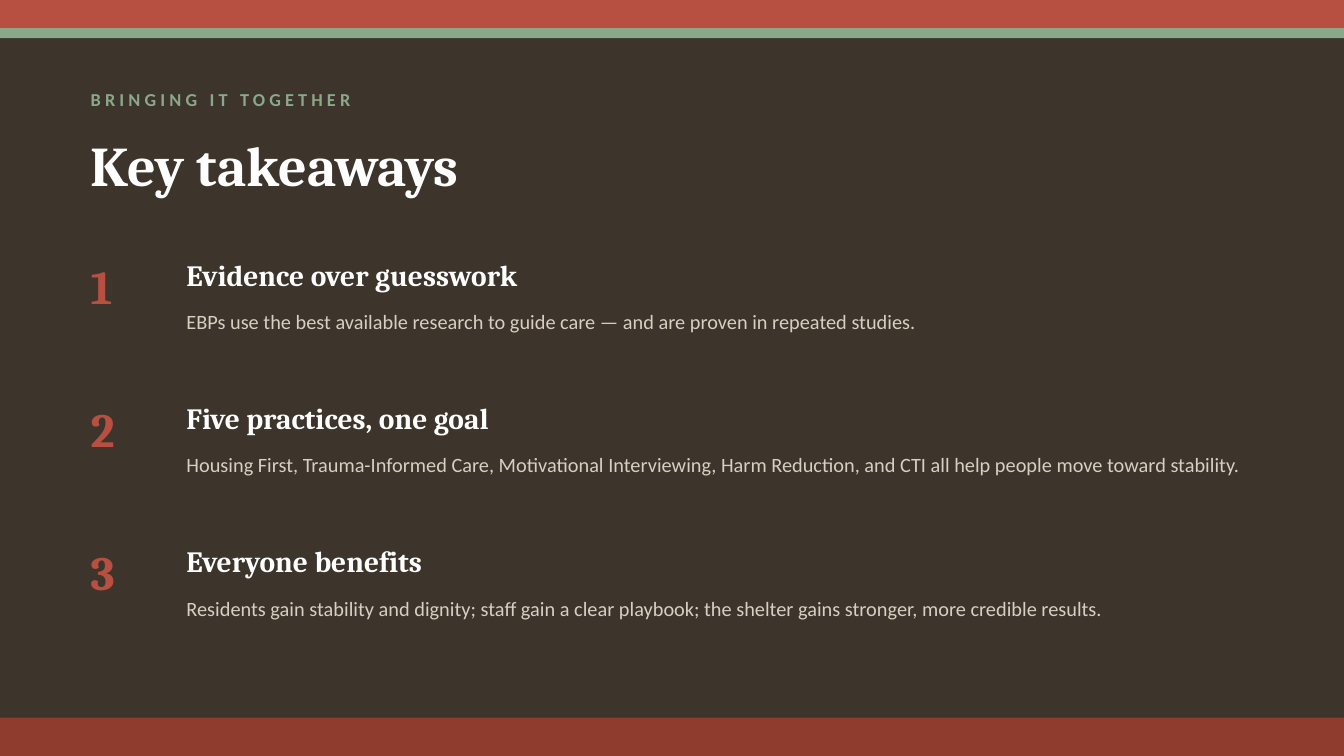
from dataclasses import dataclass

from pptx import Presentation
from pptx.dml.color import RGBColor
from pptx.enum.shapes import MSO_SHAPE
from pptx.enum.text import MSO_ANCHOR
from pptx.slide import Slide
from pptx.util import Pt

DARK = RGBColor(0x3D, 0x34, 0x2C)
CLAY = RGBColor(0xB8, 0x50, 0x42)
BRICK = RGBColor(0x8F, 0x3B, 0x2E)
SAGE = RGBColor(0x8B, 0xA8, 0x88)
SAND = RGBColor(0xD8, 0xCF, 0xC1)
WHITE = RGBColor(0xFF, 0xFF, 0xFF)

# Lengths in points
SLIDE_W, SLIDE_H = 960, 540
LEFT, HEADER_W = 64.8, 828
TEXT_LEFT, TEXT_W = 133.2, 763.2
FIRST_ROW, ROW_STEP, BODY_OFFSET = 183.6, 102.24, 37.44
CELL = 61.2


@dataclass(frozen=True)
class Band:
    top: float
    height: float
    color: RGBColor


@dataclass(frozen=True)
class Style:
    font: str
    size: float
    color: RGBColor
    bold: bool = True
    spacing: int = 0  # hundredths of a point
    anchor: MSO_ANCHOR = MSO_ANCHOR.TOP


@dataclass(frozen=True)
class Takeaway:
    heading: str
    body: str


EYEBROW = Style("Calibri", 13, SAGE, spacing=300, anchor=MSO_ANCHOR.MIDDLE)
TITLE = Style("Cambria", 40, WHITE)
NUMBER = Style("Cambria", 34, CLAY)
HEADING = Style("Cambria", 21, WHITE)
BODY = Style("Calibri", 14.5, SAND, bold=False)

BANDS = [
    Band(0, 20.16, CLAY),
    Band(20.16, 7.2, SAGE),
    Band(512.64, 27.36, BRICK),
]

TAKEAWAYS = [
    Takeaway(
        "Evidence over guesswork",
        "EBPs use the best available research to guide care — and are proven "
        "in repeated studies.",
    ),
    Takeaway(
        "Five practices, one goal",
        "Housing First, Trauma-Informed Care, Motivational Interviewing, "
        "Harm Reduction, and CTI all help people move toward stability.",
    ),
    Takeaway(
        "Everyone benefits",
        "Residents gain stability and dignity; staff gain a clear playbook; "
        "the shelter gains stronger, more credible results.",
    ),
]


def add_band(slide: Slide, band: Band) -> None:
    sp = slide.shapes.add_shape(
        MSO_SHAPE.RECTANGLE, 0, Pt(band.top), Pt(SLIDE_W), Pt(band.height)
    )
    sp.shadow.inherit = False
    sp.fill.solid()
    sp.fill.fore_color.rgb = band.color
    sp.line.fill.background()


def add_text(slide: Slide, text: str, style: Style, left: float, top: float,
             width: float, height: float) -> None:
    sp = slide.shapes.add_textbox(Pt(left), Pt(top), Pt(width), Pt(height))
    tf = sp.text_frame
    tf.word_wrap = True
    tf.vertical_anchor = style.anchor
    tf.margin_left = tf.margin_top = tf.margin_right = tf.margin_bottom = 0
    r = tf.paragraphs[0].add_run()
    r.text = text
    r.font.name = style.font
    r.font.size = Pt(style.size)
    r.font.bold = style.bold
    r.font.color.rgb = style.color
    if style.spacing:
        r.font._element.set("spc", str(style.spacing))


def add_takeaway(slide: Slide, index: int, item: Takeaway) -> None:
    top = FIRST_ROW + index * ROW_STEP
    add_text(slide, str(index + 1), NUMBER, LEFT, top, CELL, CELL)
    add_text(slide, item.heading, HEADING, TEXT_LEFT, top, TEXT_W, 36)
    add_text(slide, item.body, BODY, TEXT_LEFT, top + BODY_OFFSET, TEXT_W, CELL)


def main() -> None:
    prs = Presentation()
    prs.slide_width, prs.slide_height = Pt(SLIDE_W), Pt(SLIDE_H)
    slide = prs.slides.add_slide(prs.slide_layouts[6])
    slide.background.fill.solid()
    slide.background.fill.fore_color.rgb = DARK

    # Bands along the top and bottom edges
    for band in BANDS:
        add_band(slide, band)

    # Header
    add_text(slide, "BRINGING IT TOGETHER", EYEBROW, LEFT, 56.16, HEADER_W, 28.8)
    add_text(slide, "Key takeaways", TITLE, LEFT, 93.6, HEADER_W, 64.8)

    # Numbered takeaways
    for index, item in enumerate(TAKEAWAYS):
        add_takeaway(slide, index, item)

    prs.save("out.pptx")


if __name__ == "__main__":
    main()
